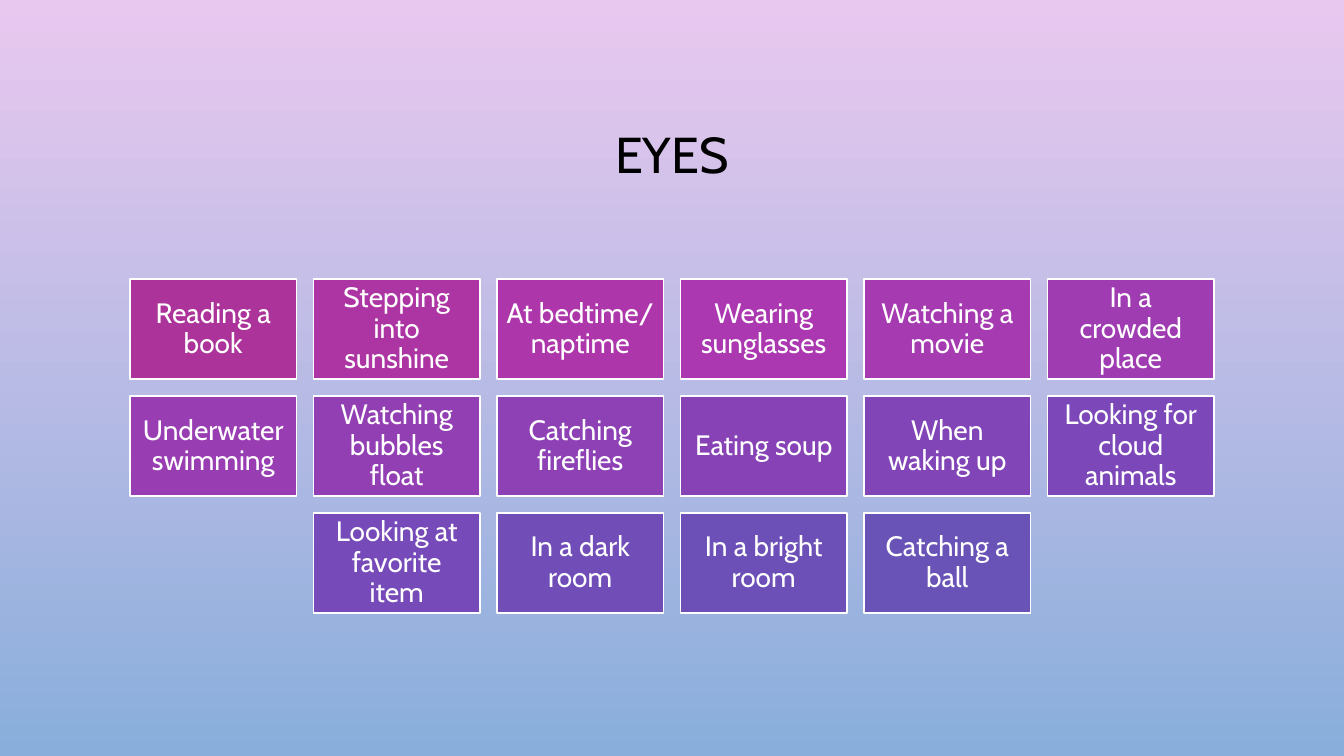
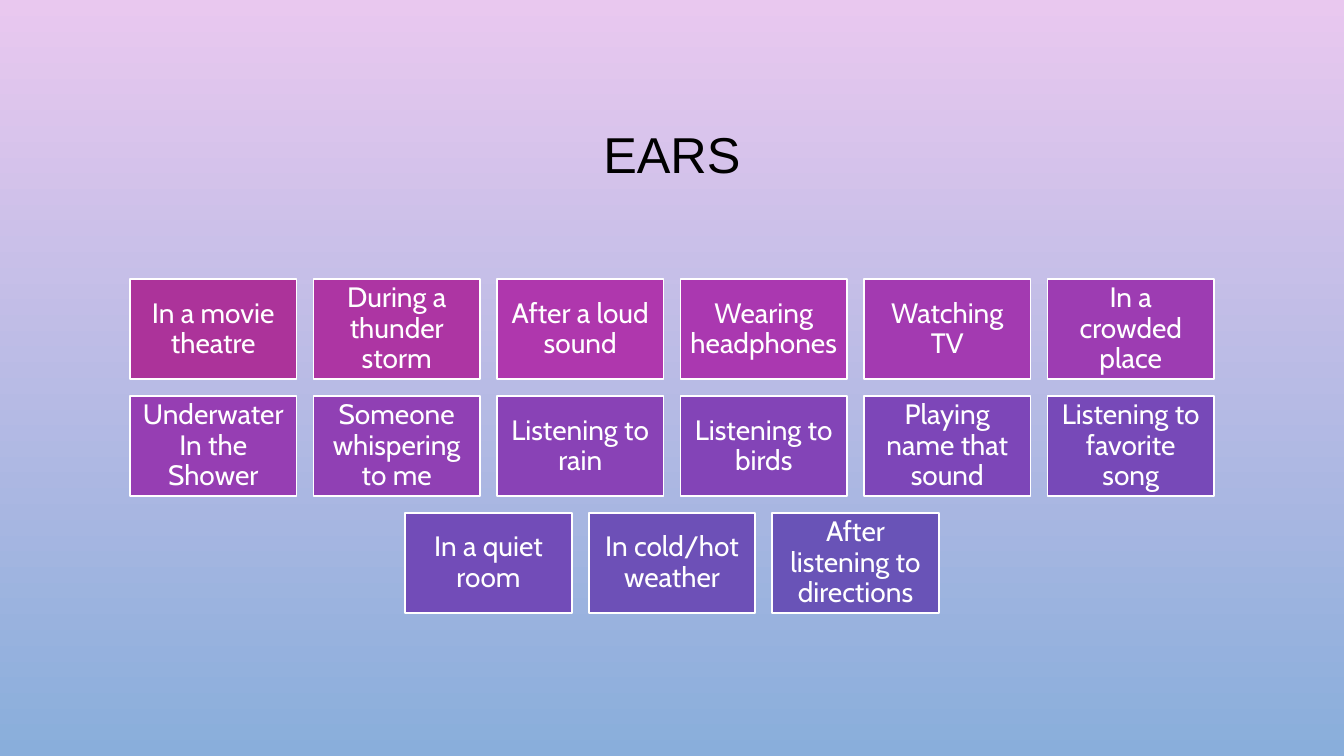
"""Build two slides of sense prompts, each a title over a centred grid of boxes."""
import colorsys

import pptx
import pptx.dml.color
import pptx.enum.shapes
import pptx.enum.text
import pptx.util

RGB = pptx.dml.color.RGBColor
INCH = pptx.util.Inches
PT = pptx.util.Pt
ALIGN = pptx.enum.text.PP_ALIGN
MIDDLE = pptx.enum.text.MSO_ANCHOR.MIDDLE
RECT = pptx.enum.shapes.MSO_SHAPE.RECTANGLE

PINK = RGB(0xE9, 0xC8, 0xEF)
BLUE = RGB(0x89, 0xAE, 0xDB)
FIRST = RGB(0xAC, 0x33, 0x9A)
LAST = RGB(0x69, 0x53, 0xB7)
WHITE = RGB(0xFF, 0xFF, 0xFF)
BLACK = RGB(0, 0, 0)

WIDE, HIGH = 13.33, 7.5
COLS = 6
BOX_W, BOX_H = 1.65, 0.99
STEP_X, STEP_Y = 1.82, 1.16
TOP = 2.77
PAD = INCH(0.08)

HEAD = {"size": PT(36)}
BODY = {"name": "Cabin", "size": PT(20)}
FRAME = {"word_wrap": True, "vertical_anchor": MIDDLE}
INSET = {"margin_left": PAD, "margin_right": PAD, "margin_top": PAD, "margin_bottom": PAD}
PARA = {"alignment": ALIGN.CENTER, "line_spacing": 0.9}

DECK = [
    ("EYES", "Cabin", [
        "Reading a book", "Stepping into sunshine", "At bedtime/ naptime",
        "Wearing sunglasses", "Watching a movie", "In a crowded place",
        "Underwater swimming", "Watching bubbles float", "Catching fireflies",
        "Eating soup", "When waking up", "Looking for cloud animals",
        "Looking at favorite item", "In a dark room", "In a bright room",
        "Catching a ball"]),
    ("EARS", "Arial", [
        "In a movie theatre", "During a thunder storm", "After a loud sound",
        "Wearing headphones", "Watching TV", "In a crowded place",
        "Underwater In the Shower", "Someone whispering to me", "Listening to rain",
        "Listening to birds", "Playing name that sound", "Listening to favorite song",
        "In a quiet room", "In cold/hot weather", "After listening to directions"]),
]


def write(shape, text, font, color, frame):
    """Put one centred paragraph in a shape."""
    body = shape.text_frame
    body.text = text
    para = body.paragraphs[0]
    for part, form in ((body, frame), (para, PARA), (para.runs[0].font, font)):
        for key, value in form.items():
            setattr(part, key, value)
    para.runs[0].font.color.rgb = color


def blend(share):
    """Mix the first and last box colours by hue, lightness and saturation."""
    ends = [colorsys.rgb_to_hls(*(part / 255 for part in tone)) for tone in (FIRST, LAST)]
    mix = [a + (b - a) * share for a, b in zip(*ends)]
    return RGB(*(round(part * 255) for part in colorsys.hls_to_rgb(*mix)))


deck = pptx.Presentation()
deck.slide_width, deck.slide_height = INCH(WIDE), INCH(HIGH)
back = deck.slide_master.background.fill
back.gradient()
back.gradient_angle = 270
for stop, tone in zip(back.gradient_stops, (PINK, BLUE)):
    stop.color.rgb = tone

for title, face, items in DECK:
    slide = deck.slides.add_slide(deck.slide_layouts[6])
    head = slide.shapes.add_textbox(INCH(1), INCH(0.68), INCH(WIDE - 2), INCH(1.75))
    write(head, title, HEAD | {"name": face}, BLACK, FRAME)

    for i, item in enumerate(items):
        row, col = divmod(i, COLS)
        count = min(COLS, len(items) - row * COLS)
        left = (WIDE - (count - 1) * STEP_X - BOX_W) / 2
        box = slide.shapes.add_shape(
            RECT, INCH(left + col * STEP_X), INCH(TOP + row * STEP_Y),
            INCH(BOX_W), INCH(BOX_H))
        box.shadow.inherit = False
        box.fill.solid()
        box.fill.fore_color.rgb = blend(i / (len(items) - 1))
        box.line.color.rgb = WHITE
        box.line.width = PT(1.25)
        write(box, item, BODY, WHITE, FRAME | INSET)

deck.save("out.pptx")
